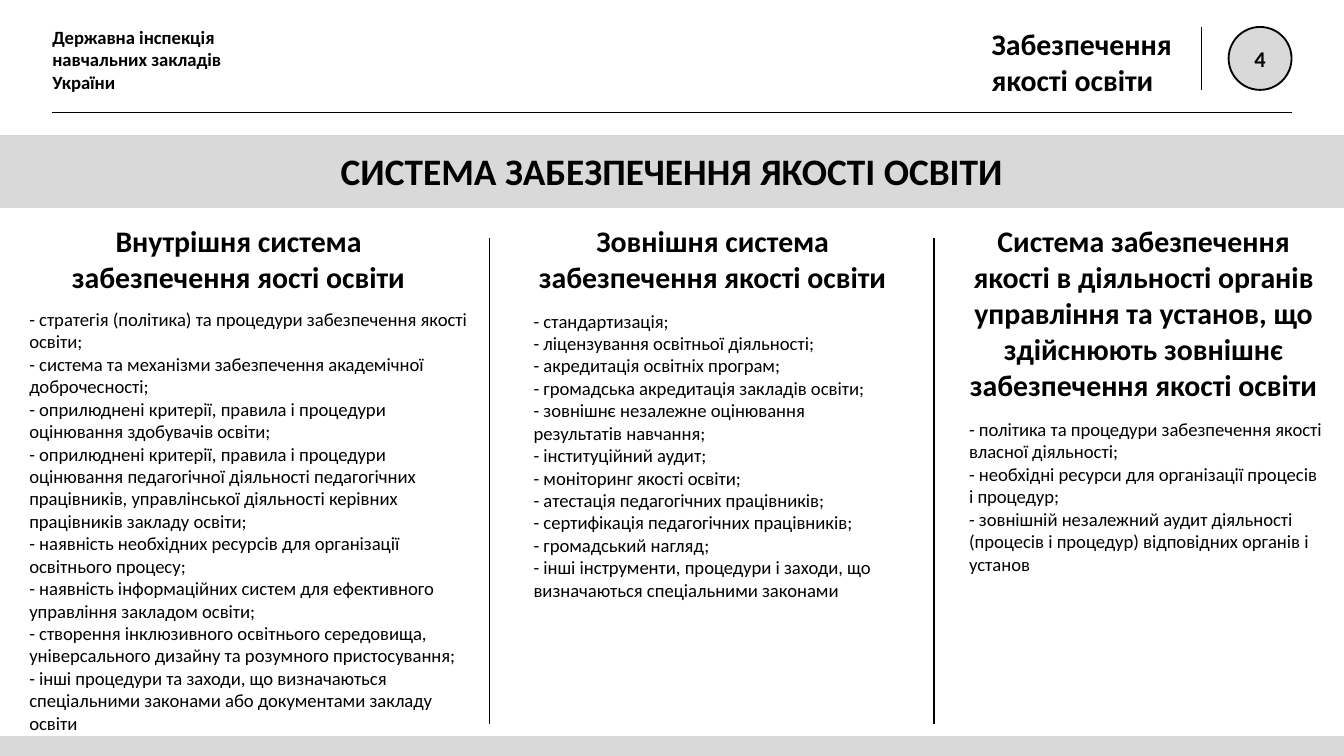
from pptx import Presentation
from pptx import util as u
from pptx.dml.color import RGBColor
from pptx.enum import shapes, text
from pptx.oxml.ns import qn
from lxml import etree

Cm, Pt = u.Cm, u.Pt
COLORS = {"ink": "000000", "grey": "D9D9D9"}
FONT = "Calibri"
WIDTH, HEIGHT = 25.4, 14.29

COLUMNS = [
    {
        "head": "Внутрішня система забезпечення яості освіти",
        "head_box": (1.02, 4.09, 6.98, 1.63),
        "list_box": (0.3, 5.69, 8.97, 8.38),
        "items": [
            "стратегія (політика) та процедури забезпечення якості освіти;",
            "система та механізми забезпечення академічної доброчесності;",
            "оприлюднені критерії, правила і процедури оцінювання здобувачів освіти;",
            "оприлюднені критерії, правила і процедури оцінювання педагогічної діяльності "
            "педагогічних працівників, управлінської діяльності керівних працівників "
            "закладу освіти;",
            "наявність необхідних ресурсів для організації освітнього процесу;",
            "наявність інформаційних систем для ефективного управління закладом освіти;",
            "створення інклюзивного освітнього середовища, універсального дизайну та "
            "розумного пристосування;",
            "інші процедури та заходи, що визначаються спеціальними законами або "
            "документами закладу освіти",
        ],
    },
    {
        "head": "Зовнішня система забезпечення якості освіти",
        "head_box": (9.7, 4.09, 7.54, 1.63),
        "list_box": (9.83, 5.72, 7.24, 5.82),
        "items": [
            "стандартизація;",
            "ліцензування освітньої діяльності;",
            "акредитація освітніх програм;",
            "громадська акредитація закладів освіти;",
            "зовнішнє незалежне оцінювання результатів навчання;",
            "інституційний аудит;",
            "моніторинг якості освіти;",
            "атестація педагогічних працівників;",
            "сертифікація педагогічних працівників;",
            "громадський нагляд;",
            "інші інструменти, процедури і заходи, що визначаються спеціальними законами",
        ],
    },
    {
        "head": "Система забезпечення якості в діяльності органів управління та установ, "
                "що здійснюють зовнішнє забезпечення якості освіти",
        "head_box": (18.06, 4.09, 7.11, 3.68),
        "list_box": (18.06, 7.77, 7.24, 3.25),
        "items": [
            "політика та процедури забезпечення якості власної діяльності;",
            "необхідні ресурси для організації процесів і процедур;",
            "зовнішній незалежний аудит діяльності (процесів і процедур) відповідних "
            "органів і установ",
        ],
    },
]


def rgb(name):
    return RGBColor.from_string(COLORS[name])


def place(sp, box):
    sp.left, sp.top, sp.width, sp.height = (Cm(v) for v in box)


def write(sp, lines, size=10, bold=False, align="LEFT", anchor="TOP", wrap=True):
    """Fill a shape with paragraphs in one format."""
    tf = sp.text_frame
    tf.text = "\n".join(lines)
    tf.word_wrap = wrap
    tf.auto_size = text.MSO_AUTO_SIZE.NONE
    tf.vertical_anchor = getattr(text.MSO_ANCHOR, anchor)
    for p in tf.paragraphs:
        p.alignment = getattr(text.PP_ALIGN, align)
        p.space_before = p.space_after = Pt(0)
        p.line_spacing = 1.0
        for r in p.runs:
            r.font.name, r.font.size, r.font.bold = FONT, Pt(size), bold
            r.font.color.rgb = rgb("ink")


def add_text(s, box, lines, **fmt):
    sp = s.shapes.add_textbox(*(Cm(v) for v in box))
    write(sp, lines, **fmt)


def add_filled(s, kind, box, line, width):
    sp = s.shapes.add_shape(kind, *(Cm(v) for v in box))
    sp.shadow.inherit = False
    sp.fill.solid()
    sp.fill.fore_color.rgb = rgb("grey")
    sp.line.color.rgb = rgb(line)
    sp.line.width = Pt(width)
    return sp


def add_rule(s, x1, y1, x2, y2):
    c = s.shapes.add_connector(shapes.MSO_CONNECTOR.STRAIGHT, Cm(x1), Cm(y1), Cm(x2), Cm(y2))
    c.line.color.rgb = rgb("ink")
    c.line.width = Pt(0.75)
    etree.SubElement(c._element.spPr, qn("a:effectLst"))


def header(s, left, top, width, height):
    """Organisation, section name and page number above a rule."""
    right, d = left + width, 1.19
    add_text(s, (left - 0.25, top - 0.15, 3.76, 1.55),
             ["Державна інспекція", "навчальних закладів", "України"], bold=True, wrap=False)
    add_text(s, (right - 5.92, top - 0.15, 3.96, 1.63),
             ["Забезпечення", "якості освіти"], size=16, bold=True, wrap=False)
    add_rule(s, right - 1.7, top, right - 1.7, top + d)
    page = add_filled(s, shapes.MSO_SHAPE.OVAL, (right - d, top, d, d), "ink", 1)
    write(page, ["4"], size=12, bold=True, align="CENTER", anchor="MIDDLE", wrap=False)
    add_rule(s, left, top + height, right, top + height)


def band(s, left, top, width, height):
    """Grey bar across the slide with the title on it."""
    bar = add_filled(s, shapes.MSO_SHAPE.RECTANGLE, (left, top, width, height), "grey", 2)
    title = s.shapes.title
    place(title, (left + 1, top + 0.08, width - 2, height - 0.18))
    write(title, ["СИСТЕМА ЗАБЕЗПЕЧЕННЯ ЯКОСТІ ОСВІТИ"], size=20, bold=True, align="CENTER")
    bar._element.addnext(title._element)


def column(s, body, head, head_box, list_box, items):
    """Heading over a list in a body placeholder."""
    add_text(s, head_box, [head], size=16, bold=True, align="CENTER")
    place(body, list_box)
    write(body, ["- " + item for item in items])
    for p in body.text_frame.paragraphs:
        pPr = p._p.get_or_add_pPr()
        pPr.set("marL", "0")
        pPr.set("indent", "0")
        etree.SubElement(pPr, qn("a:buNone"))


def main():
    prs = Presentation()
    prs.slide_width, prs.slide_height = Cm(WIDTH), Cm(HEIGHT)
    s = prs.slides.add_slide(prs.slide_layouts.get_by_name("Comparison"))
    *bodies, spare = [ph for ph in s.placeholders if ph.placeholder_format.idx in range(1, 5)]
    spare._element.getparent().remove(spare._element)

    header(s, 0.99, 0.51, 23.42, 1.62)
    band(s, 0, 2.59, WIDTH, 1.3)

    # Three columns with dividers between them
    for body, col in zip(bodies, COLUMNS):
        column(s, body, **col)
    for x in (9.25, 17.65):
        add_rule(s, x, 4.5, x, 13.69)

    # Footer bar
    add_filled(s, shapes.MSO_SHAPE.RECTANGLE, (0, 13.94, WIDTH, 0.41), "grey", 2)
    prs.save("out.pptx")


if __name__ == "__main__":
    main()
